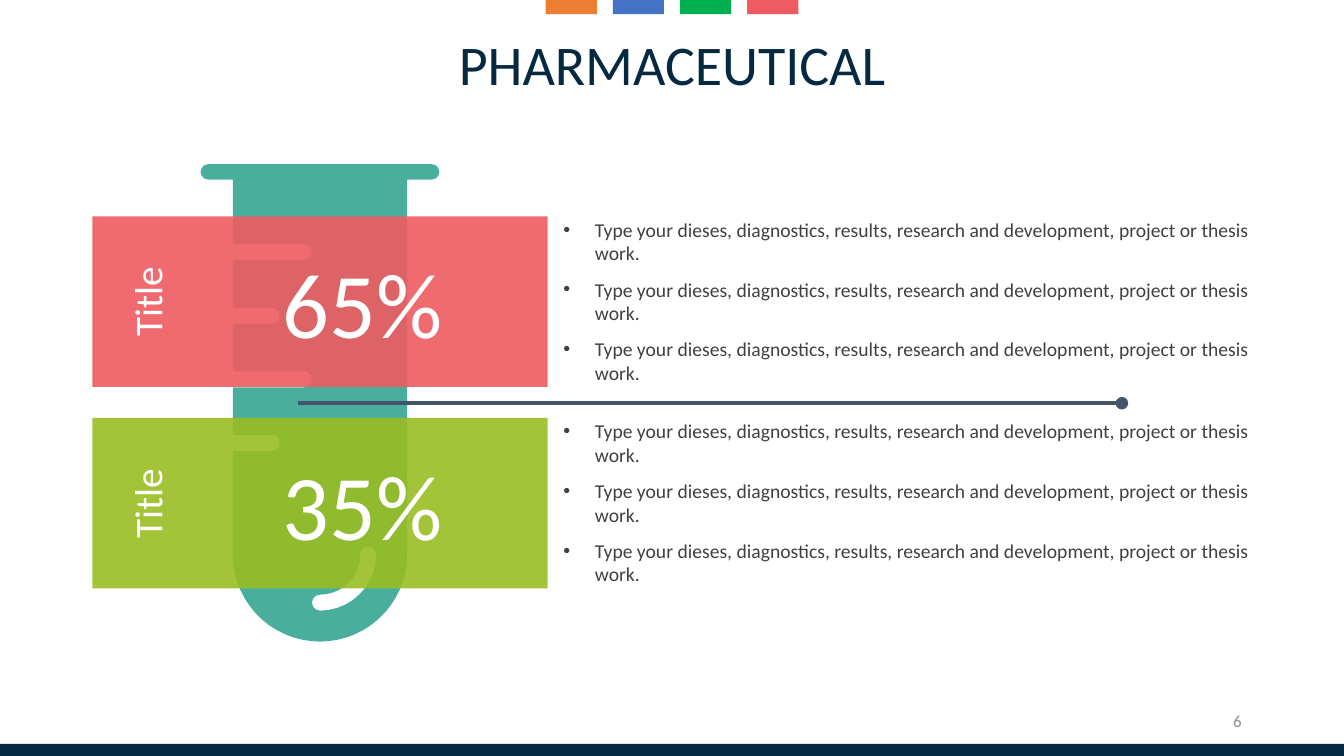
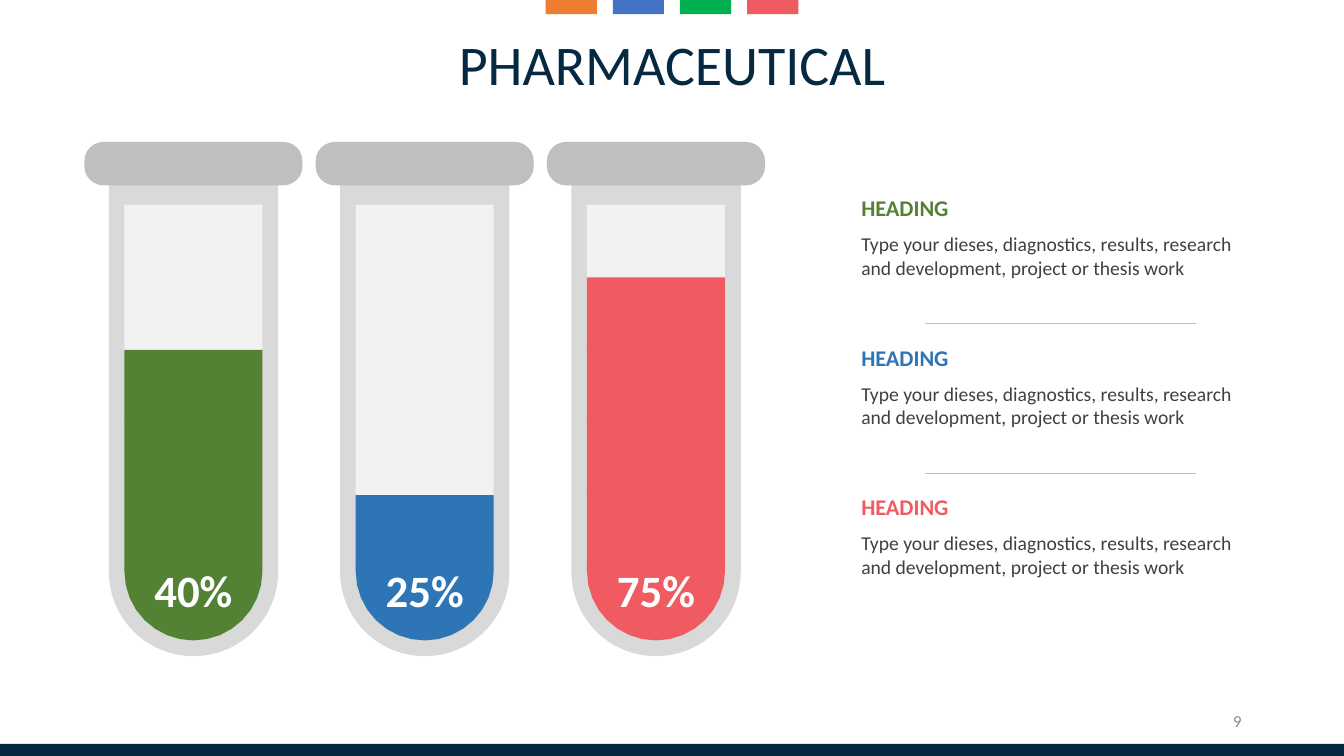
"""Build two pharmaceutical slides with test tubes, panels and notes."""
from dataclasses import dataclass
from math import cos, radians, sin
from typing import Any

from lxml.etree import SubElement as Sub
from pptx import Presentation
from pptx.dml.color import RGBColor as Rgb
from pptx.enum.shapes import MSO_CONNECTOR as Link, MSO_SHAPE as Form
from pptx.enum.text import MSO_ANCHOR as Anchor, MSO_AUTO_SIZE as Fit, PP_ALIGN as Align
from pptx.oxml.ns import qn
from pptx.util import Pt

Dot = tuple[float, float]
Box = tuple[float, float, float, float]

WIDE, HIGH = 960, 540
FONT = "Calibri"
HEX = {
    "navy": "042941", "orange": "ED7D31", "azure": "4472C4", "mint": "00B050",
    "coral": "EF5B61", "lime": "99BD23", "teal": "4AAE9D", "slate": "44546A",
    "green": "548235", "blue": "2E75B6", "ink": "404040", "gray": "8C8C8C",
    "glass": "D9D9D9", "lid": "BFBFBF", "pale": "F2F2F2", "white": "FFFFFF",
}
NOTE = "Type your dieses, diagnostics, results, research and development, project or thesis work"


@dataclass(frozen=True)
class Style:
    size: float
    color: str
    bold: bool = False
    align: Any = Align.LEFT
    anchor: Any = Anchor.TOP


@dataclass(frozen=True)
class Panel:
    share: str
    color: str
    top: float


@dataclass(frozen=True)
class Tube:
    share: str
    color: str
    empty: int


HEAD = Style(40, "navy", align=Align.CENTER, anchor=Anchor.MIDDLE)
PAGE = Style(12, "gray", align=Align.RIGHT, anchor=Anchor.MIDDLE)
SIDE = Style(28, "white", align=Align.CENTER, anchor=Anchor.MIDDLE)
HUGE = Style(66, "white", align=Align.CENTER, anchor=Anchor.MIDDLE)
MARK = Style(32, "white", True, Align.CENTER, Anchor.MIDDLE)
BODY = Style(14, "ink")

PANELS = [Panel("65%", "coral", 154.5), Panel("35%", "lime", 298.5)]
TUBES = [Tube("40%", "green", 2), Tube("25%", "blue", 4), Tube("75%", "coral", 1)]


def rgb(name: str) -> Rgb:
    return Rgb.from_string(HEX[name])


def points(box: Box) -> list[int]:
    return [Pt(part) for part in box]


def paint(shape: Any, color: str, alpha: int = 100) -> None:
    shape.shadow.inherit = False
    shape.fill.solid()
    shape.fill.fore_color.rgb = rgb(color)
    shape.line.fill.background()
    if alpha < 100:
        tint = shape._element.spPr.find(qn("a:solidFill"))[0]
        Sub(tint, qn("a:alpha"), val=str(alpha * 1000))


def block(shapes: Any, box: Box, color: str, alpha: int = 100, form: Any = Form.RECTANGLE) -> Any:
    shape = shapes.add_shape(form, *points(box))
    paint(shape, color, alpha)
    return shape


def write(shape: Any, text: str, style: Style, inset: float = 0) -> None:
    frame = shape.text_frame
    frame.text = text
    frame.word_wrap = True
    frame.auto_size = Fit.NONE
    frame.vertical_anchor = style.anchor
    frame.margin_left = frame.margin_right = Pt(inset)
    frame.margin_top = frame.margin_bottom = Pt(inset / 2)
    for para in frame.paragraphs:
        para.alignment = style.align
        for run in para.runs:
            font = run.font
            font.name, font.size, font.bold = FONT, Pt(style.size), style.bold
            font.color.rgb = rgb(style.color)


def label(shapes: Any, box: Box, text: str, style: Style, inset: float = 0) -> Any:
    shape = shapes.add_textbox(*points(box))
    write(shape, text, style, inset)
    return shape


def rule(shapes: Any, left: float, right: float, top: float, color: str, width: float,
         tail: str = "") -> None:
    line = shapes.add_connector(Link.STRAIGHT, *points((left, top, right, top)))
    line.line.color.rgb = rgb(color)
    line.line.width = Pt(width)
    props = line._element.spPr
    if tail:
        Sub(props.find(qn("a:ln")), qn("a:tailEnd"), type=tail)
    Sub(props, qn("a:effectLst"))


def arc(mid: Dot, radius: float, start: float, stop: float, steps: int = 6) -> list[Dot]:
    turns = [radians(start + (stop - start) * i / steps) for i in range(steps + 1)]
    return [(mid[0] + radius * cos(t), mid[1] + radius * sin(t)) for t in turns]


def trace(shapes: Any, color: str, *paths: list[Dot]) -> None:
    pen = None
    for path in paths:
        first, *rest = [(Pt(x), Pt(y)) for x, y in path]
        if pen is None:
            pen = shapes.build_freeform(*first)
        else:
            pen.move_to(*first)
        pen.add_line_segments(rest, close=True)
    paint(pen.convert_to_shape(), color)


def base(deck: Any, page: str) -> Any:
    slide = deck.slides.add_slide(deck.slide_layouts[5])
    title = slide.shapes.title
    title.left, title.top, title.width, title.height = points((18, 21, 924, 48))
    write(title, "PHARMACEUTICAL", HEAD)
    block(slide.shapes, (0, 531.4, WIDE, 8.6), "navy")
    label(slide.shapes, (678, 500.5, 216, 28.8), page, PAGE, 7.2)
    strip = slide.shapes.add_group_shape().shapes
    for i, color in enumerate(("orange", "azure", "mint", "coral")):
        block(strip, (389.7 + 48 * i, 0, 36.6, 10.1), color)
    return slide


def flask(shapes: Any) -> None:
    mid, wall, rim, cap, slot = 228.6, 62.3, 79.8, 5.5, 5.7
    left, right, lip, bend = mid - wall, mid + wall, 122.8, 396
    edge = arc((mid - rim, lip), cap, 270, 90) + [(left, lip + cap)]
    for i in range(4):
        tip, y = (223, 200)[i % 2], 180 + 45.5 * i
        edge += [(left, y - slot), *arc((tip - slot, y), slot, -90, 90), (left, y + slot)]
    edge += arc((mid, bend), wall, 180, 0, 30)
    edge += [(right, lip + cap)] + arc((mid + rim, lip), cap, 90, -90)
    inner, outer = 28.8, 40.2
    band = (inner + outer) / 2
    shine = arc((mid, bend), outer, 90, 0, 10) + arc((mid + band, bend), slot, 0, -180)
    shine += arc((mid, bend), inner, 0, 90, 10) + arc((mid, bend + band), slot, -90, -270)
    trace(shapes, "teal", edge, shine)


def bullets(shapes: Any, top: float) -> None:
    shape = label(shapes, (402.5, top, 504, 120), "\n".join([NOTE + "."] * 3), BODY)
    for para in shape.text_frame.paragraphs:
        para.space_before = Pt(9)
        props = para._p.get_or_add_pPr()
        props.set("marL", str(Pt(22.5)))
        props.set("indent", str(Pt(-22.5)))
        Sub(props, qn("a:buFont"), typeface="Arial")
        Sub(props, qn("a:buChar"), char="•")


def panel(shapes: Any, item: Panel) -> None:
    group = shapes.add_group_shape().shapes
    block(group, (66, item.top, 325.2, 121.8), item.color, 90)
    side = label(group, (44, item.top + 44.2, 121.7, 33.8), "Title", SIDE)
    side.rotation = 270
    label(group, (151.6, item.top + 21, 214.6, 79.9), item.share, HUGE)


def tube(shapes: Any, item: Tube, mid: float) -> None:
    group = shapes.add_group_shape().shapes
    bend, wall, core, top, step = 408.2, 60.5, 49.3, 146.2, 51.85
    floor = top + 5 * step
    glass = block(group, (mid - wall, 131, 2 * wall, 337.7), "glass",
                  form=Form.ROUND_2_SAME_RECTANGLE)
    glass.adjustments[0], glass.adjustments[1] = 0, 0.5
    lid = block(group, (mid - 77.9, 101.4, 155.8, 31), "lid", form=Form.ROUNDED_RECTANGLE)
    lid.adjustments[0] = 0.44
    for i in range(5):
        color = "pale" if i < item.empty else item.color
        block(group, (mid - core, top + step * i, 2 * core, step + 0.5), color)
    trace(group, item.color,
          [(mid - core, floor), *arc((mid, bend), core, 180, 0, 16), (mid + core, floor)])
    label(shapes, (mid - 40, 402, 80, 38.8), item.share, MARK)


def note(shapes: Any, color: str, top: float) -> None:
    group = shapes.add_group_shape().shapes
    label(group, (615.2, top, 284.4, 19.4), "HEADING", Style(16, color, True))
    label(group, (615.2, top + 26.8, 284.4, 51), NOTE, BODY)


def main() -> None:
    deck = Presentation()
    deck.slide_width, deck.slide_height = Pt(WIDE), Pt(HIGH)

    shapes = base(deck, "6").shapes
    flask(shapes)
    rule(shapes, 213, 801.4, 288, "slate", 3, "oval")
    for item in PANELS:
        panel(shapes, item)
        bullets(shapes, item.top + 1)

    shapes = base(deck, "9").shapes
    for i, item in enumerate(TUBES):
        tube(shapes, item, 138.2 + 165.2 * i)
        note(shapes, item.color, 139 + 106.8 * i)
    for i in range(len(TUBES) - 1):
        rule(shapes, 661, 854, 231 + 106.8 * i, "lid", 0.5)

    deck.save("out.pptx")


if __name__ == "__main__":
    main()
